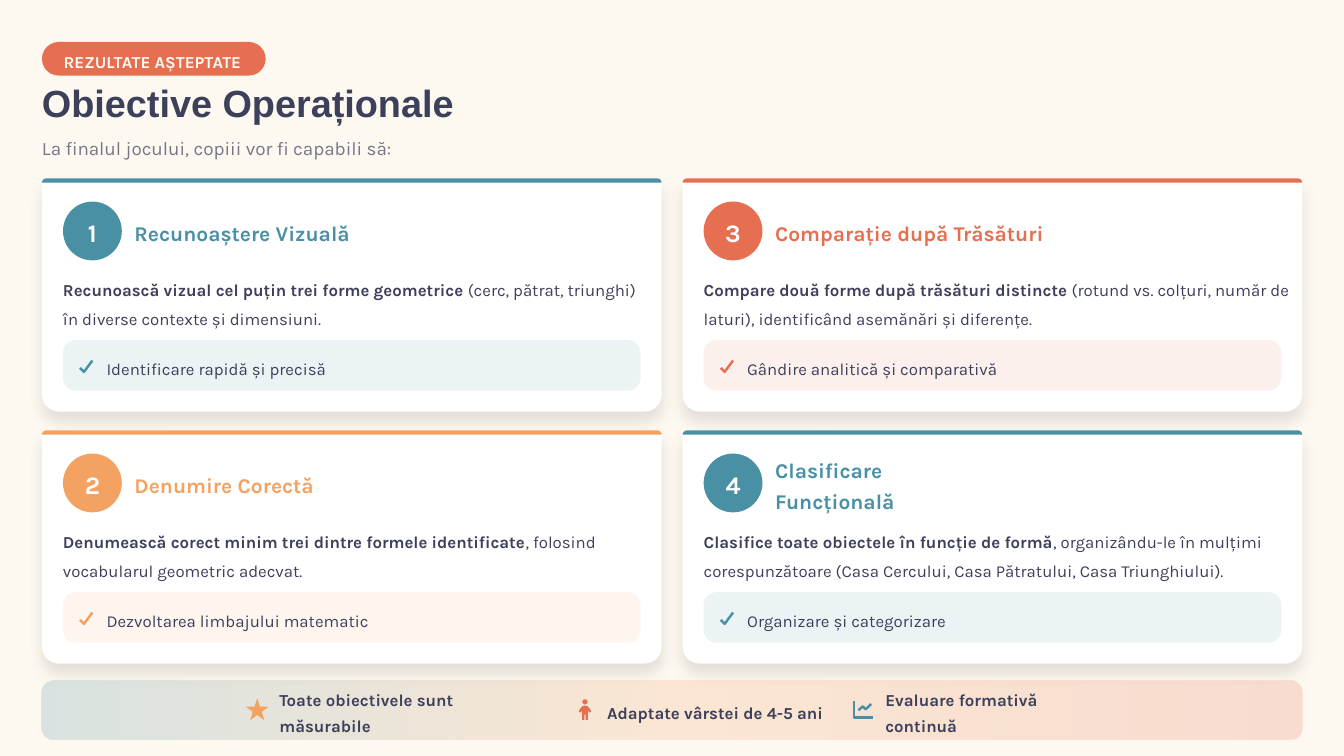
from lxml.etree import SubElement
from pptx import Presentation
from pptx.dml.color import RGBColor
from pptx.enum.shapes import MSO_SHAPE
from pptx.enum.text import MSO_ANCHOR, MSO_AUTO_SIZE, PP_ALIGN
from pptx.oxml.ns import qn
from pptx.util import Inches, Pt

CREAM = RGBColor(0xFD, 0xF8, 0xF0)
INK = RGBColor(0x3D, 0x40, 0x5B)
WHITE = RGBColor(0xFF, 0xFF, 0xFF)
TEAL = RGBColor(0x4A, 0x90, 0xA4)
CORAL = RGBColor(0xE7, 0x6F, 0x51)
ORANGE = RGBColor(0xF4, 0xA2, 0x61)

prs = Presentation()
prs.slide_width, prs.slide_height = Inches(13.33), Inches(7.5)
U = prs.slide_height / 720  # the slide is a grid of 1280 columns by 720 rows
s = prs.slides.add_slide(prs.slide_layouts[1])
s.background.fill.solid()
s.background.fill.fore_color.rgb = CREAM


def draw(form, x, y, w=0, h=0, fill=None, alpha=100, corners=(), stroke=None):
    """Draw a preset shape, or a list of points relative to x, y, in grid units."""
    if isinstance(form, list):
        points = [((x + px) * U, (y + py) * U) for px, py in form]
        fb = s.shapes.build_freeform(*points[0], scale=1.0)
        fb.add_line_segments(points[1:], close=stroke is None)
        sp = fb.convert_to_shape()
    else:
        sp = s.shapes.add_shape(form, *(round(v * U) for v in (x, y, w, h)))
    for i, radius in enumerate(corners):
        sp.adjustments[i] = radius / min(w, h)
    sp.shadow.inherit = False
    if stroke:
        sp.fill.background()
        sp.line.color.rgb = stroke
        sp.line.width = Pt(1.75)
        return sp
    sp.line.fill.background()
    sp.fill.solid()
    sp.fill.fore_color.rgb = fill
    if alpha < 100:
        color = sp._element.spPr.find(".//" + qn("a:srgbClr"))
        SubElement(color, qn("a:alpha"), val=str(alpha * 1000))
    return sp


def add_text(text, box=None, sp=None, size=12, color=INK, bold=False, rest="",
             font="Karla", spacing=1.3, align=PP_ALIGN.LEFT, inset=0, alpha=100):
    """Write text, then rest in regular weight, in sp or in a new text box."""
    if sp is None:
        sp = s.shapes.add_textbox(0, 0, 0, 0)
    if box:
        sp.left, sp.top, sp.width, sp.height = (round(v * U) for v in box)
    tf = sp.text_frame
    tf.word_wrap = True
    tf.auto_size = MSO_AUTO_SIZE.NONE
    tf.vertical_anchor = MSO_ANCHOR.MIDDLE
    tf.margin_left = round(inset * U)
    tf.margin_top = tf.margin_right = tf.margin_bottom = 0
    p = tf.paragraphs[0]
    p.alignment, p.line_spacing, p.space_before = align, spacing, 0
    for words, weight in ((text, bold), (rest, False)):
        if words:
            r = p.add_run()
            r.text = words
            r.font.name, r.font.size, r.font.bold = font, Pt(size), weight
            r.font.color.rgb = color
            if alpha < 100:
                rgb = r._r.find(".//" + qn("a:srgbClr"))
                SubElement(rgb, qn("a:alpha"), val=str(alpha * 1000))
    return p


# Header
pill = draw(MSO_SHAPE.ROUNDED_RECTANGLE, 40, 40, 213, 32, CORAL, corners=[16])
add_text("REZULTATE AȘTEPTATE", sp=pill, color=CREAM, bold=True, inset=16)
add_text("Obiective Operaționale", (40, 80, 1218, 40), s.shapes.title,
         size=27, bold=True, font="Arial", spacing=0.9)
p = add_text("La finalul jocului, copiii vor fi capabili să:", (40, 124, 1209, 28),
             s.placeholders[1], size=13.5, alpha=70)
pPr = p._p.get_or_add_pPr()
pPr.set("marL", "0")
pPr.set("indent", "0")
SubElement(pPr, qn("a:buNone"))

# Objective cards, filled column by column
CARD_W, CARD_H = 590, 222
CHECK = [(1.2, 9.4), (5, 13.2), (13, 2.4)]
cap_left = [(0, 4), (0.3, 2.5), (1.2, 1.2), (2.5, 0.3), (4, 0)]
CAP = cap_left + [(CARD_W - cx, cy) for cx, cy in reversed(cap_left)]
cards = [
    (TEAL, "Recunoaștere Vizuală", 207,
     "Recunoască vizual cel puțin trei forme geometrice",
     " (cerc, pătrat, triunghi) în diverse contexte și dimensiuni.",
     "Identificare rapidă și precisă"),
    (ORANGE, "Denumire Corectă", 178,
     "Denumească corect minim trei dintre formele identificate",
     ", folosind vocabularul geometric adecvat.",
     "Dezvoltarea limbajului matematic"),
    (CORAL, "Comparație după Trăsături", 257,
     "Compare două forme după trăsături distincte",
     " (rotund vs. colțuri, număr de laturi), identificând asemănări și diferențe.",
     "Gândire analitică și comparativă"),
    (TEAL, "Clasificare Funcțională", 217,
     "Clasifice toate obiectele în funcție de formă",
     ", organizându-le în mulțimi corespunzătoare (Casa Cercului, Casa Pătratului, "
     "Casa Triunghiului).",
     "Organizare și categorizare"),
]
for i, (color, heading, heading_w, goal, detail, result) in enumerate(cards):
    col, row = divmod(i, 2)
    x, y = 40 + 610 * col, 170 + 240 * row
    card = draw(MSO_SHAPE.ROUND_2_SAME_RECTANGLE, x, y, CARD_W, CARD_H, WHITE,
                corners=[4, 16])
    effects = card._element.spPr.find(qn("a:effectLst"))
    shadow = SubElement(effects, qn("a:outerShdw"), blurRad=str(Pt(11.2)),
                        dist=str(Pt(7.5)), dir="5400000", algn="ctr", rotWithShape="0")
    black = SubElement(shadow, qn("a:srgbClr"), val="000000")
    SubElement(black, qn("a:alpha"), val="10000")
    draw(CAP, x, y, fill=color)
    badge = draw(MSO_SHAPE.OVAL, x + 20, y + 22, 56, 56, color)
    add_text(str(i + 1), sp=badge, size=18, color=WHITE, bold=True, spacing=1.1,
             align=PP_ALIGN.CENTER)
    add_text(heading, (x + 88, y + 36, heading_w, 28), size=15, color=color,
             bold=True, spacing=1.2)
    add_text(goal, (x + 20, y + 90, 558, 52), bold=True, rest=detail, spacing=1.4)
    note = draw(MSO_SHAPE.ROUNDED_RECTANGLE, x + 20, y + 154, 550, 48, color,
                alpha=10, corners=[12])
    add_text(result, sp=note, inset=38)
    draw(CHECK, x + 35, y + 171, stroke=color)

# Footer band
band = draw(MSO_SHAPE.ROUNDED_RECTANGLE, 40, 648, 1200, 56, TEAL, corners=[12])
band.fill.gradient()
band.fill.gradient_angle = 0
stops = band._element.spPr.find(".//" + qn("a:gsLst"))
stops.clear()
for pos, color in ((0, TEAL), (50, ORANGE), (100, CORAL)):
    stop = SubElement(stops, qn("a:gs"), pos=str(pos * 1000))
    rgb = SubElement(stop, qn("a:srgbClr"), val=str(color))
    SubElement(rgb, qn("a:alpha"), val="20000")

ICON_Y = 666
draw(MSO_SHAPE.STAR_5_POINT, 234, ICON_Y - 1, 22, 21, ORANGE)
body_half = [(0, 6), (2.4, 6.6), (4.4, 8.8), (6, 11.5), (4.3, 12.8), (2.7, 10.8),
             (2.7, 19.6), (0.6, 19.6), (0.6, 14.6)]
draw(MSO_SHAPE.OVAL, 554.5, ICON_Y, 5, 5, CORAL)
draw(body_half + [(-bx, by) for bx, by in reversed(body_half)], 557, ICON_Y, fill=CORAL)
draw([(1.3, 1.5), (1.3, 17.5), (19, 17.5)], 812, ICON_Y, stroke=TEAL)
draw([(5.3, 10.5), (9.5, 6.8), (12.3, 9.5), (17.5, 4.5)], 812, ICON_Y, stroke=TEAL)
for x, w, label in ((266, 255, "Toate obiectivele sunt măsurabile"),
                    (578, 208, "Adaptate vârstei de 4-5 ani"),
                    (843, 213, "Evaluare formativă continuă")):
    add_text(label, (x, 664, w, 24), bold=True)

prs.save("out.pptx")
